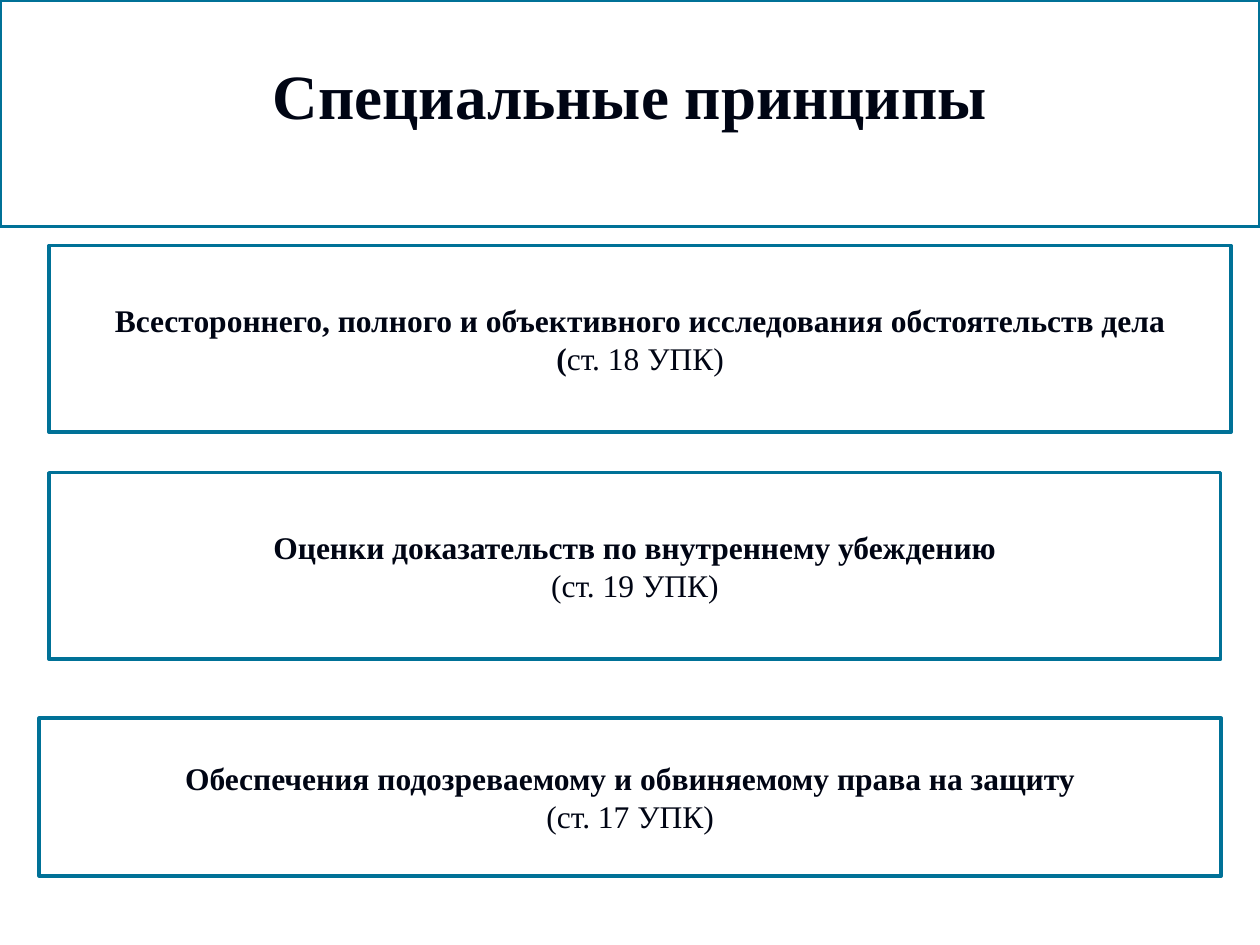
from pptx import Presentation
from pptx.dml.color import RGBColor
from pptx.enum.shapes import MSO_SHAPE
from pptx.enum.text import MSO_ANCHOR, MSO_AUTO_SIZE, PP_ALIGN
from pptx.util import Cm, Pt

WHITE = RGBColor(0xFF, 0xFF, 0xFF)
TEAL = RGBColor(0x00, 0x71, 0x97)
INK = RGBColor(0x00, 0x05, 0x14)
FONT = "Times New Roman"

TITLE = "Специальные принципы"
# Box in cm (left, top, width, height), then lines of (text, bold) runs
PRINCIPLES = [
    ((0.99, 4.95, 23.83, 3.76), [
        [("Всестороннего, полного и объективного исследования обстоятельств дела", True)],
        [("(", True), ("ст. 18 УПК)", False)],
    ]),
    ((0.99, 9.53, 23.62, 3.76), [
        [("Оценки доказательств по внутреннему убеждению", True)],
        [("(ст. 19 УПК)", False)],
    ]),
    ((0.79, 14.48, 23.83, 3.18), [
        [("Обеспечения подозреваемому и обвиняемому права на защиту", True)],
        [("(ст. 17 УПК)", False)],
    ]),
]


def format_frame(shape):
    shape.fill.solid()
    shape.fill.fore_color.rgb = WHITE
    shape.line.color.rgb = TEAL
    shape.line.width = Pt(2)
    text_frame = shape.text_frame
    text_frame.word_wrap = True
    text_frame.auto_size = MSO_AUTO_SIZE.NONE
    text_frame.vertical_anchor = MSO_ANCHOR.MIDDLE


def add_line(paragraph, runs, size):
    paragraph.alignment = PP_ALIGN.CENTER
    for text, bold in runs:
        run = paragraph.add_run()
        run.text = text
        run.font.name = FONT
        run.font.size = Pt(size)
        run.font.bold = bold
        run.font.color.rgb = INK


def main():
    presentation = Presentation()
    presentation.slide_width, presentation.slide_height = Cm(25.4), Cm(19.05)
    slide = presentation.slides.add_slide(presentation.slide_layouts[5])

    title = slide.shapes.title
    title.left, title.top = Cm(0), Cm(0)
    title.width, title.height = presentation.slide_width, Cm(4.57)
    format_frame(title)
    title.text_frame.margin_bottom = Cm(0.89)
    add_line(title.text_frame.paragraphs[0], [(TITLE, True)], 36)

    for box, lines in PRINCIPLES:
        shape = slide.shapes.add_shape(MSO_SHAPE.RECTANGLE, *map(Cm, box))
        shape.shadow.inherit = False
        format_frame(shape)
        text_frame = shape.text_frame
        for index, runs in enumerate(lines):
            paragraph = text_frame.add_paragraph() if index else text_frame.paragraphs[0]
            add_line(paragraph, runs, 18)

    presentation.save("out.pptx")


if __name__ == "__main__":
    main()
